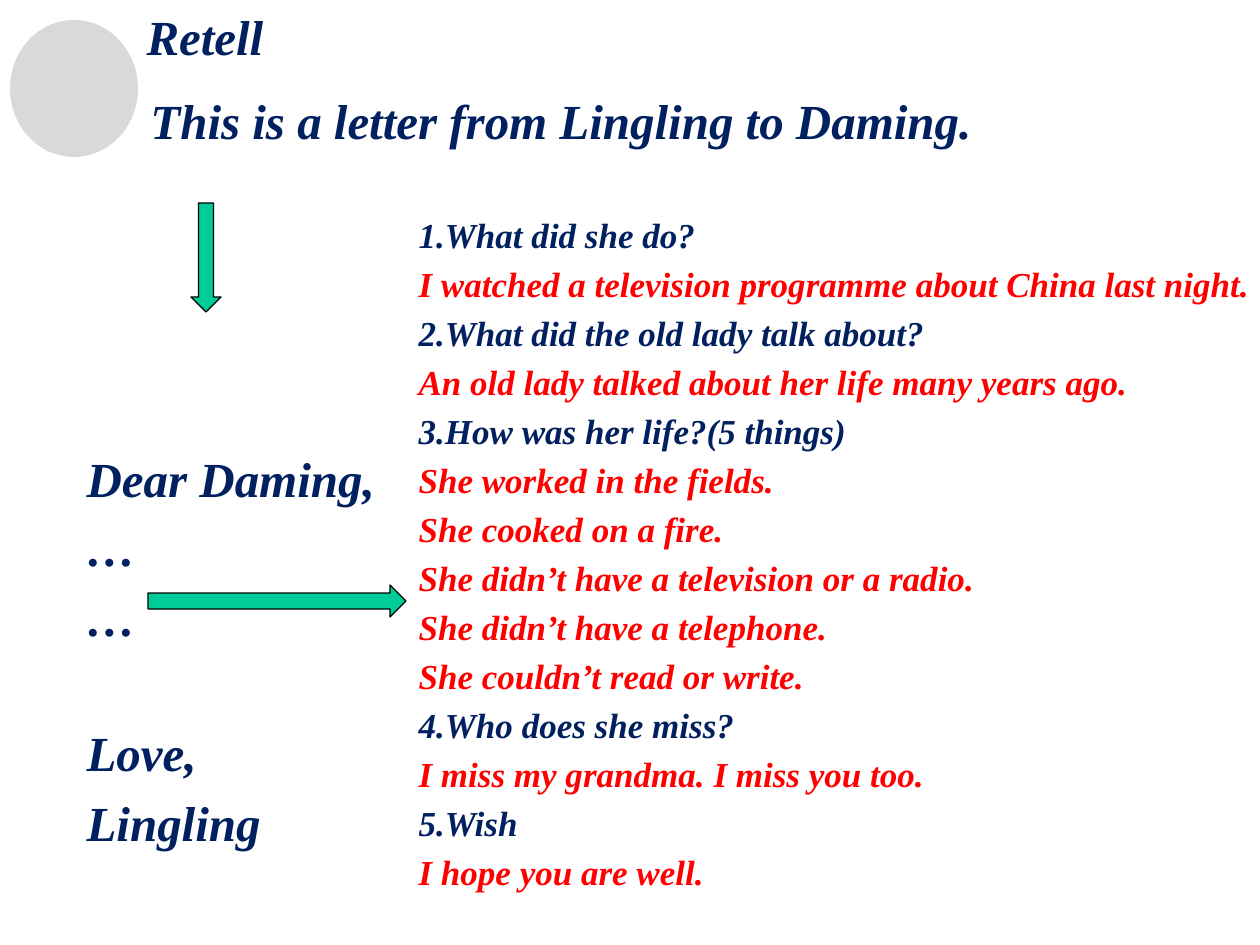
from dataclasses import dataclass
from typing import NamedTuple

import pptx
import pptx.dml.color
import pptx.enum.shapes
import pptx.enum.text
import pptx.oxml.ns
import pptx.util
from lxml import etree

EMU_PER_PX = 914400 / 126


class Box(NamedTuple):
    left: int
    top: int
    width: int
    height: int


class Line(NamedTuple):
    text: str
    color: str
    gap: int  # space before, in points


@dataclass(frozen=True)
class Theme:
    font: str = "Times New Roman"
    navy: str = "002060"
    red: str = "FF0000"
    green: str = "00CC99"
    black: str = "000000"
    grey: str = "D9D9D9"
    large: int = 28
    small: int = 20
    large_gap: int = 6
    small_gap: int = 4
    sign_off_gap: int = 44


@dataclass(frozen=True)
class Question:
    prompt: str
    answers: tuple[str, ...]


THEME = Theme()

QUESTIONS = (
    Question("1.What did she do?", ("I watched a television programme about China last night.",)),
    Question("2.What did the old lady talk about?", ("An old lady talked about her life many years ago.",)),
    Question("3.How was her life?(5 things)", (
        "She worked in the fields.",
        "She cooked on a fire.",
        "She didn’t have a television or a radio.",
        "She didn’t have a telephone.",
        "She couldn’t read or write.",
    )),
    Question("4.Who does she miss?", ("I miss my grandma. I miss you too.",)),
    Question("5.Wish", ("I hope you are well.",)),
)

LETTER = (
    Line("Dear Daming,", THEME.navy, 0),
    Line("…", THEME.navy, THEME.large_gap),
    Line("…", THEME.navy, THEME.large_gap),
    Line("Love,", THEME.navy, THEME.sign_off_gap),
    Line("Lingling", THEME.navy, THEME.large_gap),
)


def px(length: int) -> pptx.util.Emu:
    return pptx.util.Emu(round(length * EMU_PER_PX))


def rgb(color: str) -> pptx.dml.color.RGBColor:
    return pptx.dml.color.RGBColor.from_string(color)


def place(shape, box: Box) -> None:
    shape.left, shape.top, shape.width, shape.height = map(px, box)


def write(shape, lines, size: int, centred: bool = False) -> None:
    """Fill a text shape with unbulleted bold italic lines."""
    frame = shape.text_frame
    frame.word_wrap = True
    frame.auto_size = pptx.enum.text.MSO_AUTO_SIZE.NONE
    frame.vertical_anchor = pptx.enum.text.MSO_ANCHOR.TOP
    frame.text = "\n".join(line.text for line in lines)
    align = pptx.enum.text.PP_ALIGN.CENTER if centred else pptx.enum.text.PP_ALIGN.LEFT
    for paragraph, line in zip(frame.paragraphs, lines):
        paragraph.alignment = align
        paragraph.space_before = pptx.util.Pt(line.gap)
        properties = paragraph._p.get_or_add_pPr()
        properties.set("marL", "0")
        properties.set("indent", "0")
        etree.SubElement(properties, pptx.oxml.ns.qn("a:buNone"))
        for run in paragraph.runs:
            run.font.name = THEME.font
            run.font.size = pptx.util.Pt(size)
            run.font.bold = run.font.italic = True
            run.font.color.rgb = rgb(line.color)


def add_filled(slide, kind, box: Box, fill: str):
    shape = slide.shapes.add_shape(kind, *map(px, box))
    shape.shadow.inherit = False
    shape.fill.solid()
    shape.fill.fore_color.rgb = rgb(fill)
    shape.line.fill.background()
    return shape


def add_arrow(slide, box: Box, rotation: int = 0) -> None:
    arrow = add_filled(slide, pptx.enum.shapes.MSO_SHAPE.DOWN_ARROW, box, THEME.green)
    arrow.rotation = rotation
    arrow.line.color.rgb = rgb(THEME.black)
    arrow.line.width = pptx.util.Pt(0.75)


def question_lines() -> list[Line]:
    lines = []
    for question in QUESTIONS:
        lines.append(Line(question.prompt, THEME.navy, THEME.small_gap if lines else 0))
        lines += [Line(answer, THEME.red, THEME.small_gap) for answer in question.answers]
    return lines


def main() -> None:
    deck = pptx.Presentation()
    deck.slide_width, deck.slide_height = px(1260), px(945)
    slide = deck.slides.add_slide(deck.slide_layouts.get_by_name("Two Content"))
    title, letter, questions = slide.placeholders

    # Corner disc
    add_filled(slide, pptx.enum.shapes.MSO_SHAPE.OVAL, Box(10, 20, 128, 137), THEME.grey)

    # Heading and introduction
    place(title, Box(133, 0, 144, 72))
    write(title, [Line("Retell", THEME.navy, 0)], THEME.large, centred=True)
    introduction = slide.shapes.add_textbox(*map(px, Box(133, 84, 856, 72)))
    write(introduction, [Line("This is a letter from Lingling to Daming.", THEME.navy, 0)],
          THEME.large, centred=True)

    # Letter outline
    place(letter, Box(74, 442, 316, 428))
    write(letter, LETTER, THEME.large)

    # Questions and answers
    place(questions, Box(406, 207, 862, 767))
    write(questions, question_lines(), THEME.small)

    # Arrows from introduction to letter, and from letter to questions
    add_arrow(slide, Box(191, 203, 30, 109))
    add_arrow(slide, Box(261, 472, 32, 258), rotation=270)

    deck.save("out.pptx")


if __name__ == "__main__":
    main()
